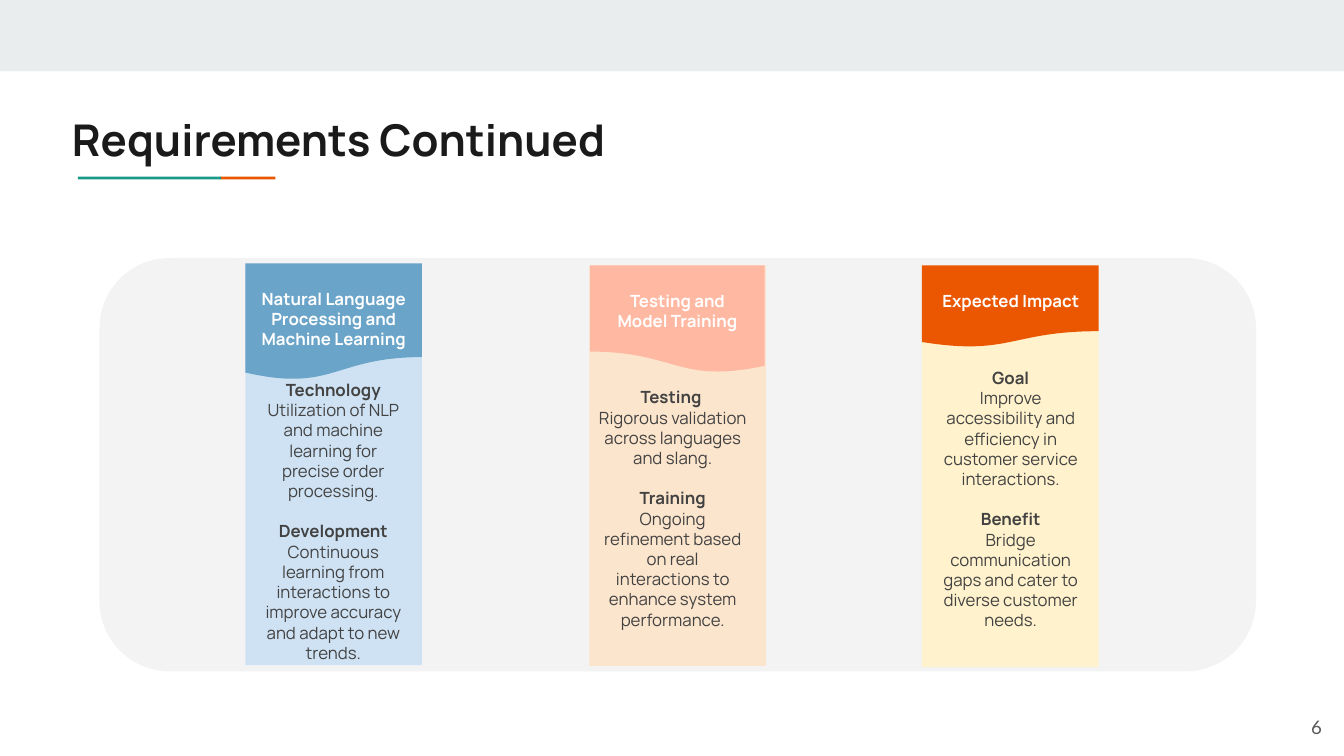
from dataclasses import dataclass

from pptx import Presentation
from pptx.dml.color import RGBColor
from pptx.enum.shapes import MSO_SHAPE
from pptx.enum.text import MSO_ANCHOR, MSO_AUTO_SIZE, PP_ALIGN
from pptx.util import Emu, Pt

RECTANGLE = MSO_SHAPE.RECTANGLE
ROUNDED = MSO_SHAPE.ROUNDED_RECTANGLE
WAVE = MSO_SHAPE.FLOWCHART_DOCUMENT
LEFT, CENTER, RIGHT = PP_ALIGN.LEFT, PP_ALIGN.CENTER, PP_ALIGN.RIGHT
TOP, MIDDLE = MSO_ANCHOR.TOP, MSO_ANCHOR.MIDDLE

EMU_PER_PX = 4572  # 200 px to the inch
INSET = 20
TITLE_ONLY = 5
FONT = "Manrope"
BODY_SIZE = 9
SECTION_GAP = 10.8


@dataclass(frozen=True)
class Box:
    left: int
    top: int
    width: int
    height: int


@dataclass(frozen=True)
class Section:
    heading: str
    detail: str


@dataclass(frozen=True)
class Column:
    title: str
    sections: tuple[Section, ...]
    panel: Box
    panel_color: str
    header: Box
    header_color: str
    title_box: Box
    body_box: Box
    flipped: bool = False


COLUMNS = (
    Column(
        "Natural Language Processing and Machine Learning",
        (
            Section("Technology", "Utilization of NLP and machine learning for "
                    "precise order processing."),
            Section("Development", "Continuous learning from interactions to "
                    "improve accuracy and adapt to new trends."),
        ),
        Box(365, 394, 263, 596), "CFE2F3", Box(365, 392, 263, 174), "6AA4C8",
        Box(365, 409, 263, 132), Box(366, 545, 260, 370),
    ),
    Column(
        "Testing and Model Training",
        (
            Section("Testing ", "Rigorous validation across languages and slang."),
            Section("Training", "Ongoing refinement based on real interactions to "
                    "enhance system performance."),
        ),
        Box(877, 395, 263, 596), "FCE5CD", Box(878, 395, 260, 160), "FFB8A2",
        Box(879, 413, 258, 132), Box(871, 556, 260, 412), flipped=True,
    ),
    Column(
        "Expected Impact",
        (
            Section("Goal", "Improve accessibility and efficiency in customer "
                    "service interactions."),
            Section("Benefit", "Bridge communication gaps and cater to diverse "
                    "customer needs."),
        ),
        Box(1372, 397, 263, 596), "FFF2CC", Box(1372, 395, 263, 122), "EB5600",
        Box(1380, 413, 248, 132), Box(1374, 527, 260, 370),
    ),
)


def px(length: int) -> Emu:
    return Emu(length * EMU_PER_PX)


def color(value: str) -> RGBColor:
    return RGBColor.from_string(value)


def place(box: Box) -> tuple[Emu, Emu, Emu, Emu]:
    return px(box.left), px(box.top), px(box.width), px(box.height)


def add_filled(page, kind, box: Box, fill: str):
    shape = page.shapes.add_shape(kind, *place(box))
    shape.shadow.inherit = False
    shape.fill.solid()
    shape.fill.fore_color.rgb = color(fill)
    shape.line.fill.background()
    return shape


def set_frame(frame, anchor=TOP) -> None:
    frame.word_wrap = True
    frame.auto_size = MSO_AUTO_SIZE.NONE
    frame.vertical_anchor = anchor
    frame.margin_left = frame.margin_right = px(INSET)
    frame.margin_top = frame.margin_bottom = px(INSET)


def write(para, text: str, size: float, fill: str, bold: bool = False,
          align=CENTER, font: str = FONT) -> None:
    para.text = text
    para.alignment = align
    para.font.name = font
    para.font.size = Pt(size)
    para.font.bold = bold
    para.font.color.rgb = color(fill)


def add_text_frame(page, box: Box, anchor=TOP):
    frame = page.shapes.add_textbox(*place(box)).text_frame
    set_frame(frame, anchor)
    return frame


def add_sections(page, box: Box, sections: tuple[Section, ...]) -> None:
    frame = add_text_frame(page, box)
    for index, section in enumerate(sections):
        heading = frame.add_paragraph() if index else frame.paragraphs[0]
        write(heading, section.heading, BODY_SIZE, "424242", bold=True)
        if index:
            heading.space_before = Pt(SECTION_GAP)
        write(frame.add_paragraph(), section.detail, BODY_SIZE, "424242")


def add_column(page, column: Column) -> None:
    add_filled(page, RECTANGLE, column.panel, column.panel_color)
    header = add_filled(page, WAVE, column.header, column.header_color)
    if column.flipped:
        header._element.spPr.xfrm.set("flipH", "1")
    title = add_text_frame(page, column.title_box).paragraphs[0]
    write(title, column.title, BODY_SIZE, "FFFFFF", bold=True)
    add_sections(page, column.body_box, column.sections)


def main() -> None:
    deck = Presentation()
    deck.slide_width, deck.slide_height = px(2000), px(1125)
    page = deck.slides.add_slide(deck.slide_layouts[TITLE_ONLY])

    # Top band and two-colour rule under the title
    add_filled(page, RECTANGLE, Box(0, 0, 2000, 106), "E9EDEE")
    add_filled(page, RECTANGLE, Box(328, 263, 82, 4), "EB5600")
    add_filled(page, RECTANGLE, Box(116, 263, 213, 4), "1A9988")

    # Title
    title = page.shapes.title
    title.left, title.top, title.width, title.height = place(Box(87, 148, 1682, 118))
    set_frame(title.text_frame)
    write(title.text_frame.paragraphs[0], "Requirements Continued", 23.4,
          "1A1A1A", bold=True, align=LEFT)

    # Backdrop and columns
    backdrop = add_filled(page, ROUNDED, Box(148, 384, 1721, 615), "F3F3F3")
    backdrop.adjustments[0] = 0.17
    for column in COLUMNS:
        add_column(page, column)

    # Page number
    number = add_text_frame(page, Box(1867, 1039, 120, 86), MIDDLE).paragraphs[0]
    write(number, "6", 10, "595959", align=RIGHT, font="Lato")

    deck.save("out.pptx")


if __name__ == "__main__":
    main()
